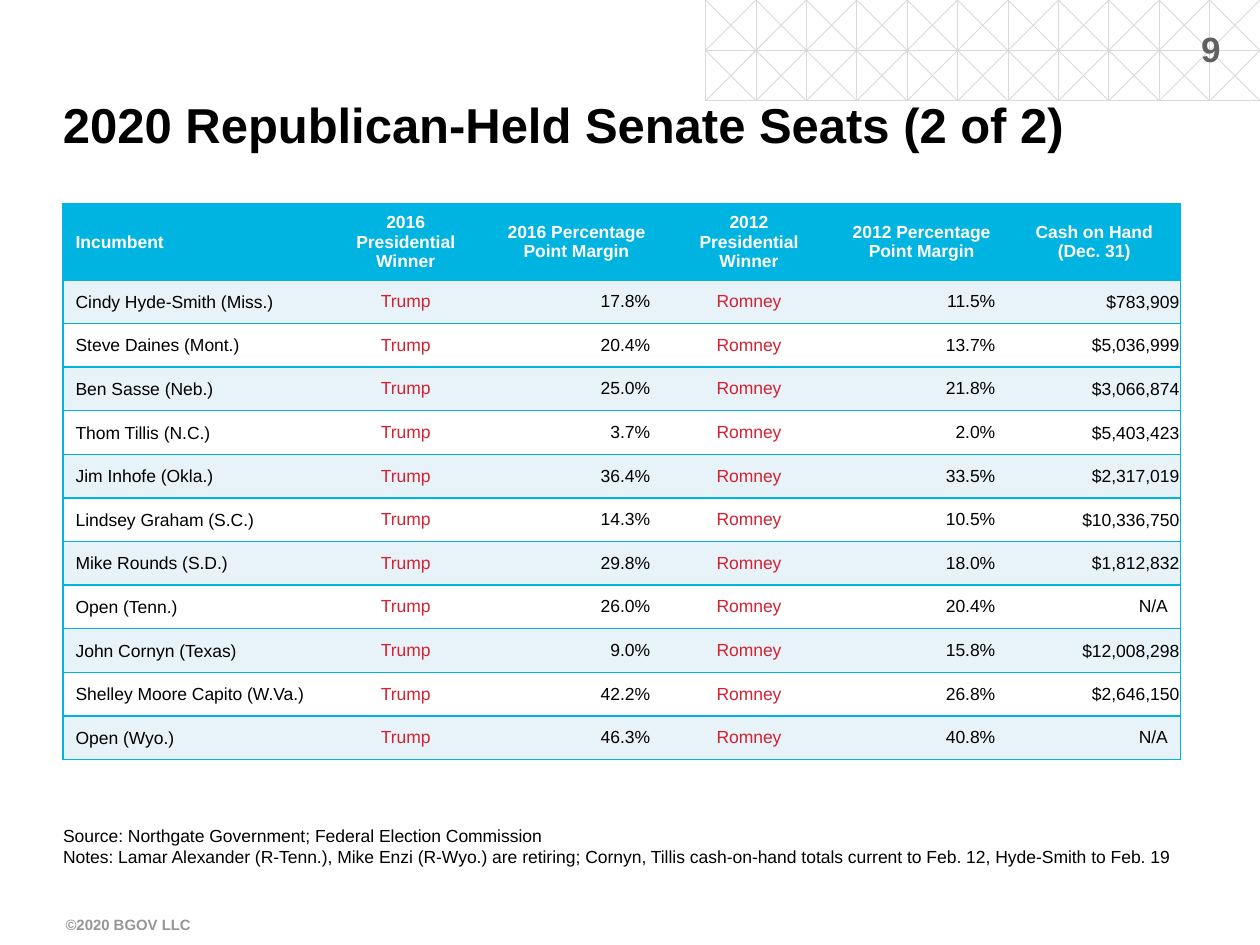
from lxml import etree
from pptx import Presentation
from pptx.dml.color import RGBColor
from pptx.enum import shapes, text
from pptx.oxml import ns
from pptx.util import Inches, Pt

BLACK = RGBColor(0x00, 0x00, 0x00)
WHITE = RGBColor(0xFF, 0xFF, 0xFF)
CYAN = RGBColor(0x00, 0xB4, 0xE1)
PALE_BLUE = RGBColor(0xE7, 0xF2, 0xF9)
RED = RGBColor(0xD2, 0x23, 0x32)
LATTICE_GRAY = RGBColor(0xD9, 0xD9, 0xD9)
NUMBER_GRAY = RGBColor(0x60, 0x60, 0x60)
FOOTER_GRAY = RGBColor(0x96, 0x96, 0x96)

LEFT, CENTER, RIGHT = text.PP_ALIGN.LEFT, text.PP_ALIGN.CENTER, text.PP_ALIGN.RIGHT
PLAIN_TABLE_STYLE = "{2D5ABB26-0587-4C30-8999-92F81FD0307C}"

COLUMN_WIDTHS = [2.05, 1.34, 1.37, 1.37, 1.37, 1.37]
COLUMN_ALIGNMENTS = [LEFT, CENTER, RIGHT, CENTER, RIGHT, RIGHT]
COLUMN_COLORS = [BLACK, RED, BLACK, RED, BLACK, BLACK]
HEADER_HEIGHT = 0.57
BODY_HEIGHT = 3.81
HEADERS = [
    "Incumbent",
    "2016\vPresidential Winner",
    "2016 Percentage\vPoint Margin",
    "2012\vPresidential Winner",
    "2012 Percentage\vPoint Margin",
    "Cash on Hand\v(Dec. 31)",
]
SEATS = [
    ("Cindy Hyde-Smith (Miss.)", "17.8%", "11.5%", "$783,909"),
    ("Steve Daines (Mont.)", "20.4%", "13.7%", "$5,036,999"),
    ("Ben Sasse (Neb.)", "25.0%", "21.8%", "$3,066,874"),
    ("Thom Tillis (N.C.)", "3.7%", "2.0%", "$5,403,423"),
    ("Jim Inhofe (Okla.)", "36.4%", "33.5%", "$2,317,019"),
    ("Lindsey Graham (S.C.)", "14.3%", "10.5%", "$10,336,750"),
    ("Mike Rounds (S.D.)", "29.8%", "18.0%", "$1,812,832"),
    ("Open (Tenn.)", "26.0%", "20.4%", "N/A"),
    ("John Cornyn (Texas)", "9.0%", "15.8%", "$12,008,298"),
    ("Shelley Moore Capito (W.Va.)", "42.2%", "26.8%", "$2,646,150"),
    ("Open (Wyo.)", "46.3%", "40.8%", "N/A"),
]
NOTES = (
    "Source: Northgate Government; Federal Election Commission\n"
    "Notes: Lamar Alexander (R-Tenn.), Mike Enzi (R-Wyo.) are retiring; "
    "Cornyn, Tillis cash-on-hand totals current to Feb. 12, Hyde-Smith to Feb. 19"
)


def write_text(frame, content, size=10, color=BLACK, bold=False, align=LEFT, spacing=None):
    frame.text = content
    for paragraph in frame.paragraphs:
        paragraph.alignment = align
        if spacing:
            paragraph.line_spacing = spacing
        font = paragraph.font
        font.name, font.size, font.bold = "Arial", Pt(size), bold
        font.color.rgb = color


def add_text_box(slide, content, left, top, width, height, side=0, edge=0.05, **style):
    shape = slide.shapes.add_textbox(Inches(left), Inches(top), Inches(width), Inches(height))
    frame = shape.text_frame
    frame.word_wrap = True
    frame.margin_left = frame.margin_right = Inches(side)
    frame.margin_top = frame.margin_bottom = Inches(edge)
    write_text(frame, content, **style)
    return shape


def add_page_number(slide, number):
    shape = add_text_box(slide, number, 9.42, 0.12, 0.38, 0.53, side=0.1,
                         size=20, color=NUMBER_GRAY, bold=True, align=CENTER)
    shape.text_frame.vertical_anchor = text.MSO_ANCHOR.MIDDLE
    shape.rotation = 90
    shape.element.txBody.find(ns.qn("a:bodyPr")).set("vert", "vert270")


def add_line(group, x1, y1, x2, y2):
    line = group.shapes.add_connector(
        shapes.MSO_CONNECTOR.STRAIGHT, Inches(x1), Inches(y1), Inches(x2), Inches(y2))
    line.line.color.rgb = LATTICE_GRAY
    line.line.width = Pt(0.5)
    etree.SubElement(line.element.spPr, ns.qn("a:effectLst"))


def add_lattice(slide, left=5.6, right=10, step=0.4):
    group = slide.shapes.add_group_shape()
    columns = round((right - left) / step)
    bottom = 2 * step
    for y in (step, bottom):
        add_line(group, left, y, right, y)
    for index in range(columns):
        x = left + index * step
        add_line(group, x, 0, x, bottom)
    for index in range(columns - 1):
        x = left + index * step
        add_line(group, x, 0, x + bottom, bottom)
        add_line(group, x + bottom, 0, x, bottom)
    for edge, inner in ((left, left + step), (right, right - step)):
        add_line(group, inner, 0, edge, step)
        add_line(group, edge, step, inner, bottom)


def add_borders(cell, sides):
    properties = cell._tc.get_or_add_tcPr()
    for side in sides:
        border = etree.SubElement(properties, ns.qn(f"a:ln{side}"), w=str(Pt(1)))
        fill = etree.SubElement(border, ns.qn("a:solidFill"))
        etree.SubElement(fill, ns.qn("a:srgbClr"), val=str(CYAN))


def fill_cell(cell, content, column, fill, **style):
    last = len(COLUMN_WIDTHS) - 1
    sides = {0: "LTB", last: "RTB"}.get(column, "TB")
    add_borders(cell, sides)
    cell.fill.solid()
    cell.fill.fore_color.rgb = fill
    cell.vertical_anchor = text.MSO_ANCHOR.MIDDLE
    if content.startswith("$"):
        cell.margin_left = cell.margin_right = cell.margin_top = Inches(0.01)
        cell.margin_bottom = 0
    write_text(cell.text_frame, content, spacing=None if column else 1.07, **style)


def add_seat_table(slide):
    frame = slide.shapes.add_table(
        len(SEATS) + 1, len(HEADERS), Inches(0.5), Inches(1.62),
        Inches(sum(COLUMN_WIDTHS)), Inches(HEADER_HEIGHT + BODY_HEIGHT))
    table = frame.table
    style = frame.element.find(f".//{ns.qn('a:tableStyleId')}")
    style.text = PLAIN_TABLE_STYLE
    for column, width in zip(table.columns, COLUMN_WIDTHS):
        column.width = Inches(width)
    for row in table.rows:
        row.height = Inches(BODY_HEIGHT / len(SEATS))
    table.rows[0].height = Inches(HEADER_HEIGHT)

    for column, header in enumerate(HEADERS):
        fill_cell(table.cell(0, column), header, column, CYAN, color=WHITE,
                  bold=True, align=CENTER if column else LEFT)
    for row, (incumbent, margin_2016, margin_2012, cash) in enumerate(SEATS, start=1):
        values = [incumbent, "Trump", margin_2016, "Romney", margin_2012, cash]
        for column, value in enumerate(values):
            fill_cell(table.cell(row, column), value, column,
                      PALE_BLUE if row % 2 else WHITE,
                      color=COLUMN_COLORS[column], align=COLUMN_ALIGNMENTS[column])


def main():
    presentation = Presentation()
    presentation.slide_width = Inches(10)
    presentation.slide_height = Inches(7.5)
    slide = presentation.slides.add_slide(presentation.slide_layouts[6])
    add_lattice(slide)
    add_page_number(slide, "9")
    add_text_box(slide, "©2020 BGOV LLC", 0.52, 7.22, 2.21, 0.38,
                 size=8.5, color=FOOTER_GRAY, bold=True)
    add_text_box(slide, "2020 Republican-Held Senate Seats (2 of 2)", 0.5, 0.75, 9, 0.47,
                 edge=0, size=28, bold=True)
    add_seat_table(slide)
    add_text_box(slide, NOTES, 0.5, 6.5, 8.88, 0.5)
    presentation.save("out.pptx")


if __name__ == "__main__":
    main()
